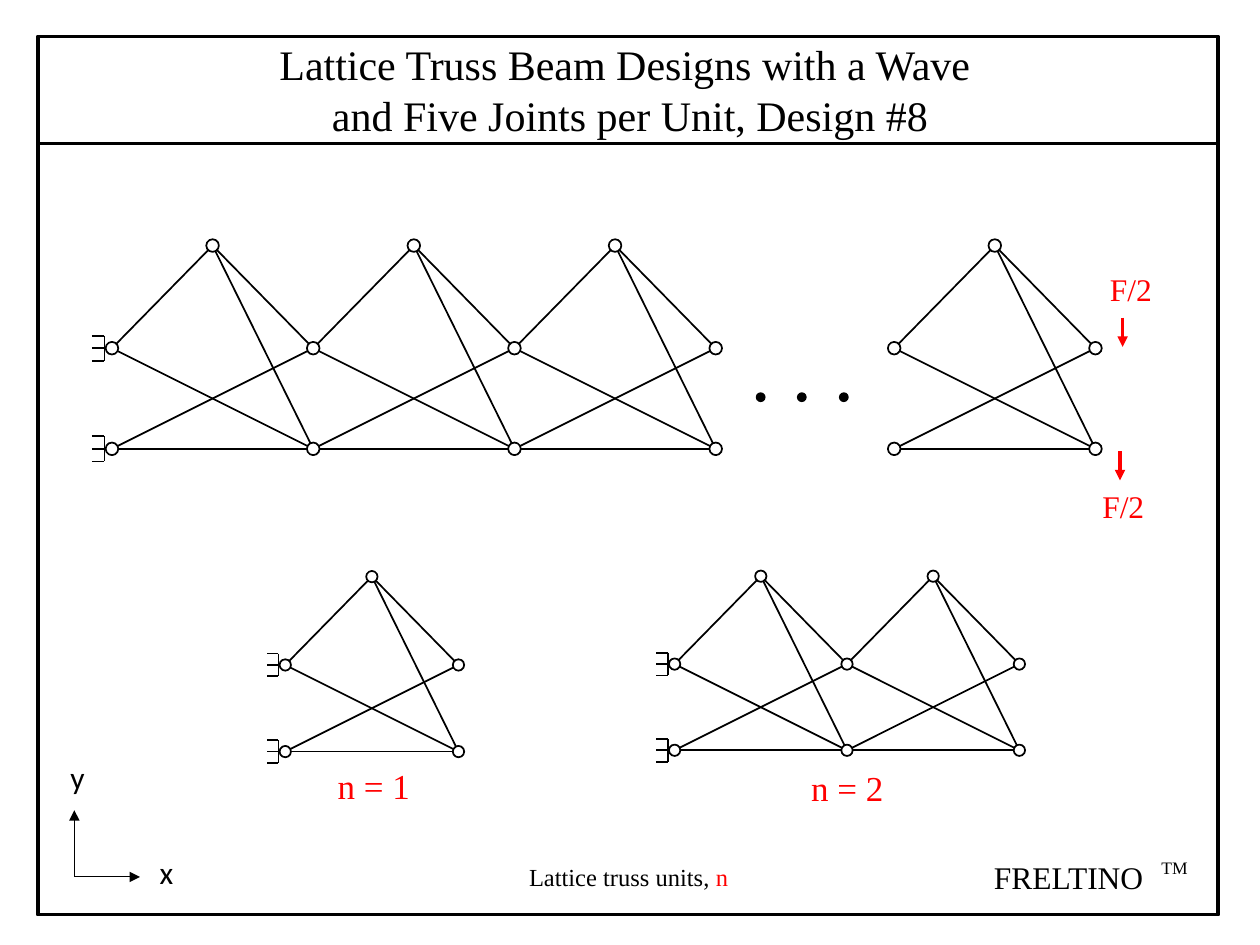
from pptx import Presentation
from pptx.dml.color import RGBColor
from pptx.enum.shapes import MSO_CONNECTOR, MSO_SHAPE
from pptx.oxml.ns import qn
from pptx.util import Pt
from lxml.etree import SubElement

BLACK = RGBColor(0, 0, 0)
WHITE = RGBColor(255, 255, 255)
RED = RGBColor(255, 0, 0)
SERIF, SANS = "Times New Roman", "Calibri"

FRAME = (21.6, 20.9, 674.6, 501.8)
TITLE_RULE_Y = 82

# left middle joint x, y; unit length; number of units; joint diameter; supported
TRUSSES = [
    (64, 199, 115, 3, 7.2, False),
    (511, 199, 115, 1, 7.2, False),
    (163, 380, 99, 1, 6.5, True),
    (385.5, 379.5, 98.5, 2, 6.5, True),
]
TRUSSES[0] = TRUSSES[0][:-1] + (True,)
RISE, DEPTH = 0.51, 0.5  # as shares of the unit length

DOTS_X, DOTS_Y, DOT = (434.7, 458.2, 482.2), 227, 4.6

# start x, y; end x, y; colour; width
ARROWS = [
    (641.5, 181.5, 641.5, 198.2, RED, 2),
    (640, 257.8, 640, 274.5, RED, 2),
    (42.5, 501.1, 80, 501.1, BLACK, 0.5),
    (42.5, 501.1, 42.5, 463, BLACK, 0.5),
]

# left, top, width, height; size; font; lines of (indent, runs)
TEXTS = [
    (152.6, 18.7, 423.4, 65.5, 24, SERIF, [
        (0, [("Lattice Truss Beam Designs with a Wave", BLACK)]),
        (30, [("and Five Joints per Unit, Design #8", BLACK)])]),
    (627.1, 150.5, 42.5, 28.8, 18, SERIF, [(0, [("F/2", RED)])]),
    (622.8, 274.9, 43.2, 28.8, 18, SERIF, [(0, [("F/2", RED)])]),
    (84.2, 483.8, 22.3, 28.8, 18, SANS, [(0, [("x", BLACK)])]),
    (33.1, 429.8, 22.3, 28.8, 18, SANS, [(0, [("y", BLACK)])]),
    (185.8, 433.4, 63.4, 31.7, 20, SERIF, [(0, [("n = 1", RED)])]),
    (456.4, 434.2, 74.9, 31.7, 20, SERIF, [(0, [("n = 2", RED)])]),
    (295.2, 488.9, 133.2, 24.5, 14, SERIF,
     [(0, [("Lattice truss units, ", BLACK), ("n", RED)])]),
    (560.9, 486.7, 109.4, 28.8, 18, SERIF, [(0, [("FRELTINO", BLACK)])]),
    (656.6, 486, 36.7, 20, 10, SERIF, [(0, [("TM", BLACK)])]),
]

prs = Presentation()
prs.slide_width, prs.slide_height = Pt(720), Pt(540)
slide = prs.slides.add_slide(prs.slide_layouts[6])
shapes = slide.shapes


def add_line(start, end, color=BLACK, width=1, arrow=False):
    line = shapes.add_connector(MSO_CONNECTOR.STRAIGHT, *map(Pt, (*start, *end)))
    line.line.color.rgb = color
    line.line.width = Pt(width)
    if arrow:
        SubElement(line.line._get_or_add_ln(), qn("a:tailEnd"), type="triangle")
    SubElement(line._element.spPr, qn("a:effectLst"))


def add_outlined(kind, box, fill=None, width=1):
    shape = shapes.add_shape(kind, *map(Pt, box))
    shape.shadow.inherit = False
    if fill is None:
        shape.fill.background()
    else:
        shape.fill.solid()
        shape.fill.fore_color.rgb = fill
    shape.line.color.rgb = BLACK
    shape.line.width = Pt(width)


def add_circle(center, diameter, fill):
    x, y = center
    add_outlined(MSO_SHAPE.OVAL,
                 (x - diameter / 2, y - diameter / 2, diameter, diameter), fill)


def add_support(joint, size):
    """Wall bracket: an upright bar with three prongs to its left."""
    x, y = joint[0] - 0.6 * size, joint[1]
    add_line((x, y - size), (x, y + size))
    for dy in (-size, 0, size):
        add_line((x - size, y + dy), (x, y + dy))


def add_truss(x, y, pitch, units, diameter, supported):
    middle = [(x + i * pitch, y) for i in range(units + 1)]
    bottom = [(jx, y + DEPTH * pitch) for jx, _ in middle]
    apexes = [(jx + pitch / 2, y - RISE * pitch) for jx, _ in middle[:-1]]
    for i, apex in enumerate(apexes):
        for start, end in [(middle[i], apex), (apex, middle[i + 1]),
                           (apex, bottom[i + 1]), (middle[i], bottom[i + 1]),
                           (bottom[i], middle[i + 1]), (bottom[i], bottom[i + 1])]:
            add_line(start, end)
    if supported:
        for joint in (middle[0], bottom[0]):
            add_support(joint, diameter)
    for joint in middle + bottom + apexes:
        add_circle(joint, diameter, WHITE)


def add_text(left, top, width, height, size, font, lines):
    frame = shapes.add_textbox(*map(Pt, (left, top, width, height))).text_frame
    frame.word_wrap = True
    for i, (indent, runs) in enumerate(lines):
        para = frame.add_paragraph() if i else frame.paragraphs[0]
        if indent:
            para._p.get_or_add_pPr().set("marL", str(Pt(indent)))
        for words, color in runs:
            run = para.add_run()
            run.text = words
            run.font.size, run.font.name = Pt(size), font
            run.font.color.rgb = color


add_outlined(MSO_SHAPE.RECTANGLE, FRAME, width=2)
add_line((FRAME[0], TITLE_RULE_Y), (FRAME[0] + FRAME[2], TITLE_RULE_Y), width=2)
for truss in TRUSSES:
    add_truss(*truss)
for dot_x in DOTS_X:
    add_circle((dot_x, DOTS_Y), DOT, BLACK)
for x1, y1, x2, y2, color, width in ARROWS:
    add_line((x1, y1), (x2, y2), color, width, arrow=True)
for text in TEXTS:
    add_text(*text)

prs.save("out.pptx")
